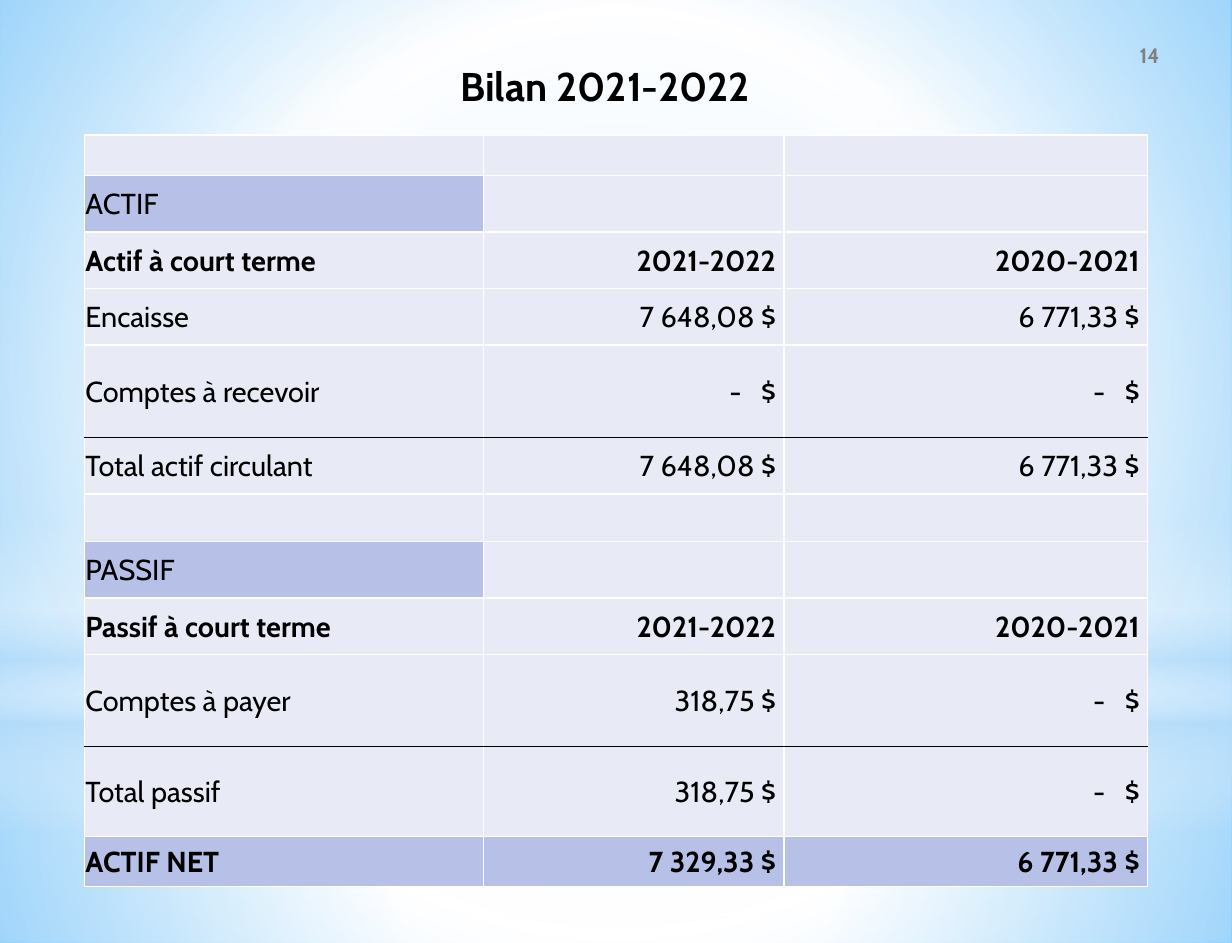
import lxml.etree
import pptx
import pptx.dml.color
import pptx.enum.shapes
import pptx.enum.text
import pptx.oxml.ns
import pptx.util

RGBColor = pptx.dml.color.RGBColor
Shape = pptx.enum.shapes.MSO_SHAPE
Align = pptx.enum.text.PP_ALIGN
Anchor = pptx.enum.text.MSO_ANCHOR
qn = pptx.oxml.ns.qn

BLACK = RGBColor(0x00, 0x00, 0x00)
WHITE = RGBColor(0xFF, 0xFF, 0xFF)
GREY = RGBColor(0x7F, 0x7F, 0x7F)
PALE = RGBColor(0xE8, 0xEA, 0xF5)
LAVENDER = RGBColor(0xB7, 0xC1, 0xE8)
SKY = RGBColor(0x99, 0xD4, 0xFE)
AZURE = RGBColor(0x54, 0xBD, 0xFF)
MIST = RGBColor(0xB4, 0xDC, 0xFA)

COLUMNS = [32.43, 24.37, 29.52]
YEARS = ("2021-2022", "2020-2021")
# Row height, label, the two amounts, and the row's style
BALANCE = [
    (4.28, "", "", "", "plain"),
    (6, "ACTIF", "", "", "section"),
    (6, "Actif à court terme", *YEARS, "heading"),
    (6, "Encaisse", "7 648,08 $", "6 771,33 $", "plain"),
    (9.79, "Comptes à recevoir", "-   $", "-   $", "ruled"),
    (6, "Total actif circulant", "7 648,08 $", "6 771,33 $", "plain"),
    (5.02, "", "", "", "plain"),
    (6, "PASSIF", "", "", "section"),
    (6, "Passif à court terme", *YEARS, "heading"),
    (9.79, "Comptes à payer", "318,75 $", "-   $", "ruled"),
    (9.55, "Total passif", "318,75 $", "-   $", "plain"),
    (5.26, "ACTIF NET", "7 329,33 $", "6 771,33 $", "net"),
]


class SlideBuilder:
    """Draws on one slide; every length is a percentage of the slide's size."""

    font = "Cabin"

    def __init__(self, presentation):
        self.width = presentation.slide_width
        self.height = presentation.slide_height
        self.slide = presentation.slides.add_slide(presentation.slide_layouts[6])

    def across(self, share):
        return round(self.width * share / 100)

    def down(self, share):
        return round(self.height * share / 100)

    def box(self, left, top, width, height):
        return self.across(left), self.down(top), self.across(width), self.down(height)

    def gradient(self, fill, owner, stops, angle=None):
        """Fill with (position, colour, opacity) stops: linear if an angle is given, else circular."""
        fill.gradient()
        gradient = next(owner.iter(qn("a:gradFill")))
        for child in list(gradient):
            gradient.remove(child)
        stop_list = lxml.etree.SubElement(gradient, qn("a:gsLst"))
        for position, color, opacity in stops:
            stop = lxml.etree.SubElement(stop_list, qn("a:gs"), pos=str(position * 1000))
            rgb = lxml.etree.SubElement(stop, qn("a:srgbClr"), val=str(color))
            if opacity < 100:
                lxml.etree.SubElement(rgb, qn("a:alpha"), val=str(opacity * 1000))
        if angle is not None:
            lxml.etree.SubElement(gradient, qn("a:lin"), ang=str(angle * 60000), scaled="0")
        else:
            circle = lxml.etree.SubElement(gradient, qn("a:path"), path="circle")
            center = {side: "50000" for side in "ltrb"}
            lxml.etree.SubElement(circle, qn("a:fillToRect"), **center)

    def background(self, stops):
        self.gradient(self.slide.background.fill, self.slide.element, stops)

    def glow(self, kind, area, stops, angle=None):
        shape = self.slide.shapes.add_shape(kind, *self.box(*area))
        shape.shadow.inherit = False
        shape.line.fill.background()
        self.gradient(shape.fill, shape.element, stops, angle)

    def set_text(self, text_frame, text, size, color=BLACK, bold=False, align=Align.LEFT):
        text_frame.text = text
        paragraph = text_frame.paragraphs[0]
        paragraph.alignment = align
        for run in paragraph.runs:
            run.font.name = self.font
            run.font.size = pptx.util.Pt(size)
            run.font.bold = bold
            run.font.color.rgb = color

    def text(self, area, text, size, color=BLACK, align=Align.LEFT, anchor=Anchor.TOP):
        text_frame = self.slide.shapes.add_textbox(*self.box(*area)).text_frame
        text_frame.word_wrap = True
        text_frame.vertical_anchor = anchor
        self.set_text(text_frame, text, size, color, True, align)

    def borders(self, cell, top, bottom):
        properties = cell._tc.get_or_add_tcPr()
        sides = {"lnL": WHITE, "lnR": WHITE, "lnT": top, "lnB": bottom}
        for index, (side, color) in enumerate(sides.items()):
            line = lxml.etree.Element(qn("a:" + side), w=str(pptx.util.Pt(1)))
            solid = lxml.etree.SubElement(line, qn("a:solidFill"))
            lxml.etree.SubElement(solid, qn("a:srgbClr"), val=str(color))
            properties.insert(index, line)

    def table(self, left, top, columns, rows):
        area = self.box(left, top, sum(columns), sum(row[0] for row in rows))
        table = self.slide.shapes.add_table(len(rows), len(columns), *area).table
        table.first_row = table.horz_banding = False
        for column, width in zip(table.columns, columns):
            column.width = self.across(width)
        above = WHITE
        for row, (height, *texts, style) in zip(table.rows, rows):
            row.height = self.down(height)
            below = BLACK if style == "ruled" else WHITE
            for index, (cell, text) in enumerate(zip(row.cells, texts)):
                shaded = style == "net" or (style == "section" and index == 0)
                cell.fill.solid()
                cell.fill.fore_color.rgb = LAVENDER if shaded else PALE
                cell.vertical_anchor = Anchor.MIDDLE
                cell.margin_left = cell.margin_top = pptx.util.Inches(0.01)
                cell.margin_right = pptx.util.Inches(0.07)
                cell.margin_bottom = 0
                self.set_text(cell.text_frame, text, 18, bold=style in ("heading", "net"),
                              align=Align.RIGHT if index else Align.LEFT)
                self.borders(cell, above, below)
            above = below


def main():
    presentation = pptx.Presentation()
    presentation.slide_width = pptx.util.Inches(10.67)
    presentation.slide_height = pptx.util.Inches(8.17)
    builder = SlideBuilder(presentation)

    builder.background([(0, SKY, 100), (60, WHITE, 100), (100, AZURE, 100)])
    builder.glow(Shape.RECTANGLE, (0, 74.42, 100, 25.58),
                 [(0, WHITE, 91), (37, WHITE, 76), (100, MIST, 79)])
    builder.glow(Shape.RECTANGLE, (0, 0, 100, 74.42),
                 [(0, WHITE, 89), (48, WHITE, 62), (100, MIST, 79)])
    builder.glow(Shape.RECTANGLE, (0, 54.96, 100, 33.29),
                 [(0, WHITE, 0), (29, WHITE, 30), (45, MIST, 40),
                  (55, WHITE, 26), (65, MIST, 60), (100, WHITE, 0)], angle=90)
    builder.glow(Shape.OVAL, (0, 23.38, 100, 74.42),
                 [(0, WHITE, 100), (56, WHITE, 0), (100, WHITE, 0)])

    builder.text((75.07, 3.18, 19.96, 5.26), "14", 13, GREY, Align.RIGHT, Anchor.MIDDLE)
    builder.table(6.84, 14.32, COLUMNS, BALANCE)
    builder.text((36.46, 5.88, 27.09, 6.36), "Bilan 2021-2022", 25)
    presentation.save("out.pptx")


if __name__ == "__main__":
    main()
